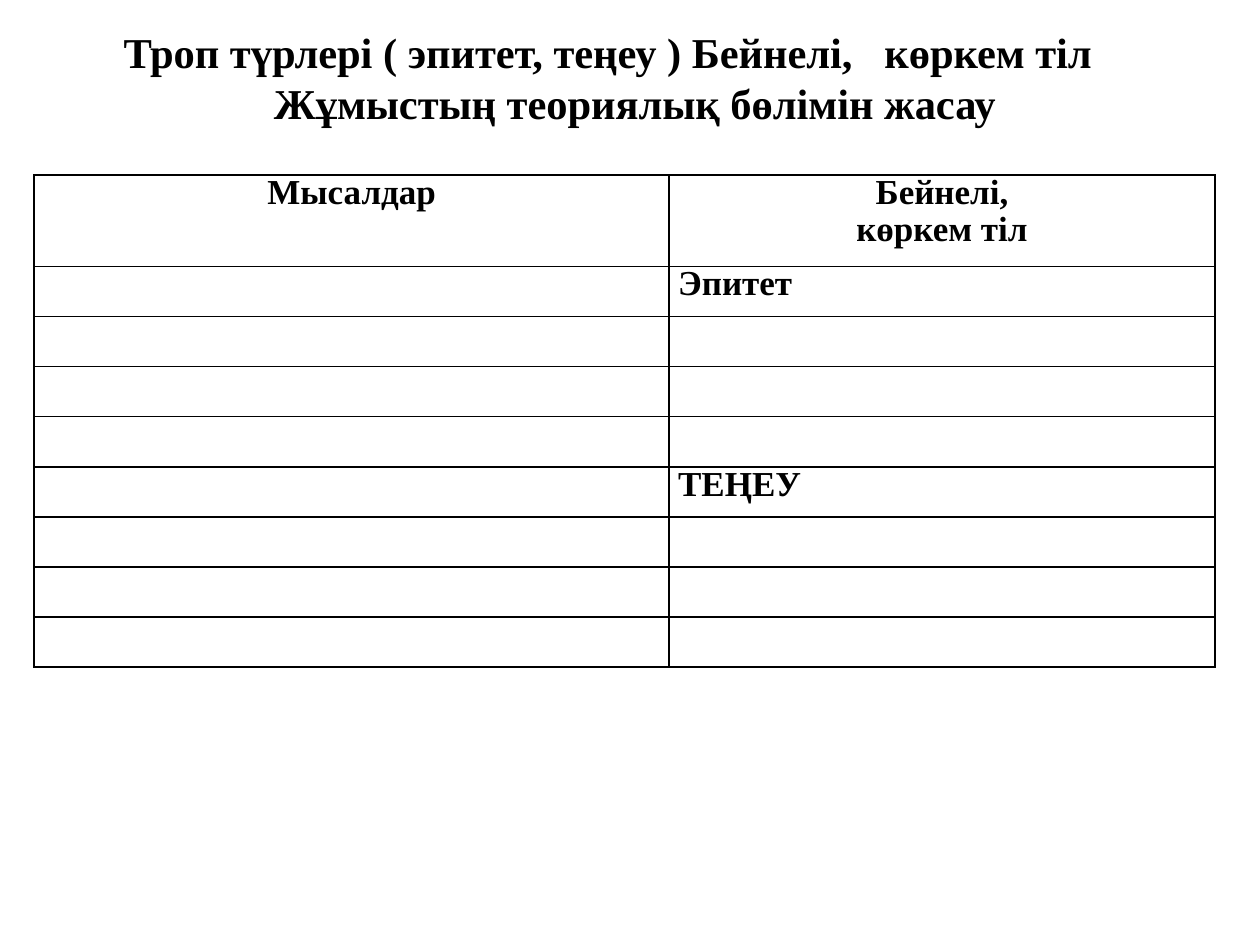
from lxml import etree
from pptx import Presentation
from pptx.dml.color import RGBColor
from pptx.enum.text import MSO_ANCHOR, MSO_AUTO_SIZE, PP_ALIGN
from pptx.oxml.ns import qn
from pptx.util import Cm, Pt

CENTER, LEFT = PP_ALIGN.CENTER, PP_ALIGN.LEFT
MIDDLE, TOP = MSO_ANCHOR.MIDDLE, MSO_ANCHOR.TOP
NO_FIT = MSO_AUTO_SIZE.NONE
TITLE_ONLY = 5
FONT = "Times New Roman"
BLACK = "000000"
TITLE_LINES = [["Троп түрлері ( эпитет, теңеу ) Бейнелі,", " ", "көркем тіл"],
               ["Жұмыстың теориялық бөлімін жасау"]]
COLUMN_WIDTHS = [12.8, 11]
HEADER_HEIGHT, ROW_HEIGHT, ROW_COUNT = 1.84, 1.01, 9
CELL_TEXTS = {(0, 0): "Мысалдар", (0, 1): "Бейнелі,\nкөркем тіл",
              (1, 1): "Эпитет", (5, 1): "ТЕҢЕУ"}


def color(value):
    """Turn a hex string into a colour."""
    return RGBColor.from_string(value)


def format_paragraph(para, size, alignment):
    """Apply the slide's bold serif style to a paragraph."""
    para.alignment = alignment
    para.font.name = FONT
    para.font.size = Pt(size)
    para.font.bold = True
    para.font.color.rgb = color(BLACK)


def set_margins(target, left, top, right, bottom):
    """Set the inner margins of a text frame or cell in centimetres."""
    target.margin_left, target.margin_top = Cm(left), Cm(top)
    target.margin_right, target.margin_bottom = Cm(right), Cm(bottom)


def add_title(page):
    """Place the two title lines, the second one shifted to the right."""
    title = page.shapes.title
    title.left, title.top, title.width, title.height = Cm(1.27), Cm(0.76), Cm(22.86), Cm(3.18)
    frame = title.text_frame
    frame.auto_size = NO_FIT
    frame.word_wrap = True
    frame.vertical_anchor = MIDDLE
    set_margins(frame, 0, 0, 0.9, 1.6)
    for index, parts in enumerate(TITLE_LINES):
        para = frame.add_paragraph() if index else frame.paragraphs[0]
        for part in parts:
            span = para.add_run()
            span.text = part
            if part == " ":
                span.font._element.set("spc", "1200")
        para.space_before = Pt(0)
        format_paragraph(para, 24.3, CENTER)
    para._p.get_or_add_pPr().set("marL", str(Cm(1.1)))


def add_borders(cell):
    """Draw a thin black line on all four sides of a cell."""
    properties = cell._tc.get_or_add_tcPr()
    for index, side in enumerate(("a:lnL", "a:lnR", "a:lnT", "a:lnB")):
        line = etree.Element(qn(side), w=str(Pt(1)))
        fill = etree.SubElement(line, qn("a:solidFill"))
        etree.SubElement(fill, qn("a:srgbClr"), val=BLACK)
        properties.insert(index, line)


def fill_cell(cell, text, alignment):
    """Write and format one table cell."""
    cell.fill.background()
    cell.vertical_anchor = TOP
    set_margins(cell, 0.18, 0, 0.18, 0)
    add_borders(cell)
    cell.text = text
    for para in cell.text_frame.paragraphs:
        para.line_spacing = 0.95
        format_paragraph(para, 20, alignment)


def add_examples_table(page):
    """Add the table of examples and figures of speech."""
    height = HEADER_HEIGHT + ROW_HEIGHT * (ROW_COUNT - 1)
    table = page.shapes.add_table(ROW_COUNT, len(COLUMN_WIDTHS), Cm(0.69), Cm(3.53),
                                  Cm(sum(COLUMN_WIDTHS)), Cm(height)).table
    table.horz_banding = False
    for column, width in zip(table.columns, COLUMN_WIDTHS):
        column.width = Cm(width)
    for row_index, row in enumerate(table.rows):
        row.height = Cm(ROW_HEIGHT if row_index else HEADER_HEIGHT)
        for column_index, cell in enumerate(row.cells):
            text = CELL_TEXTS.get((row_index, column_index), "")
            fill_cell(cell, text, LEFT if row_index else CENTER)


def main():
    """Build and save the deck."""
    deck = Presentation()
    deck.slide_width, deck.slide_height = Cm(25.4), Cm(19.05)
    page = deck.slides.add_slide(deck.slide_layouts[TITLE_ONLY])
    add_title(page)
    add_examples_table(page)
    deck.save("out.pptx")


if __name__ == "__main__":
    main()
